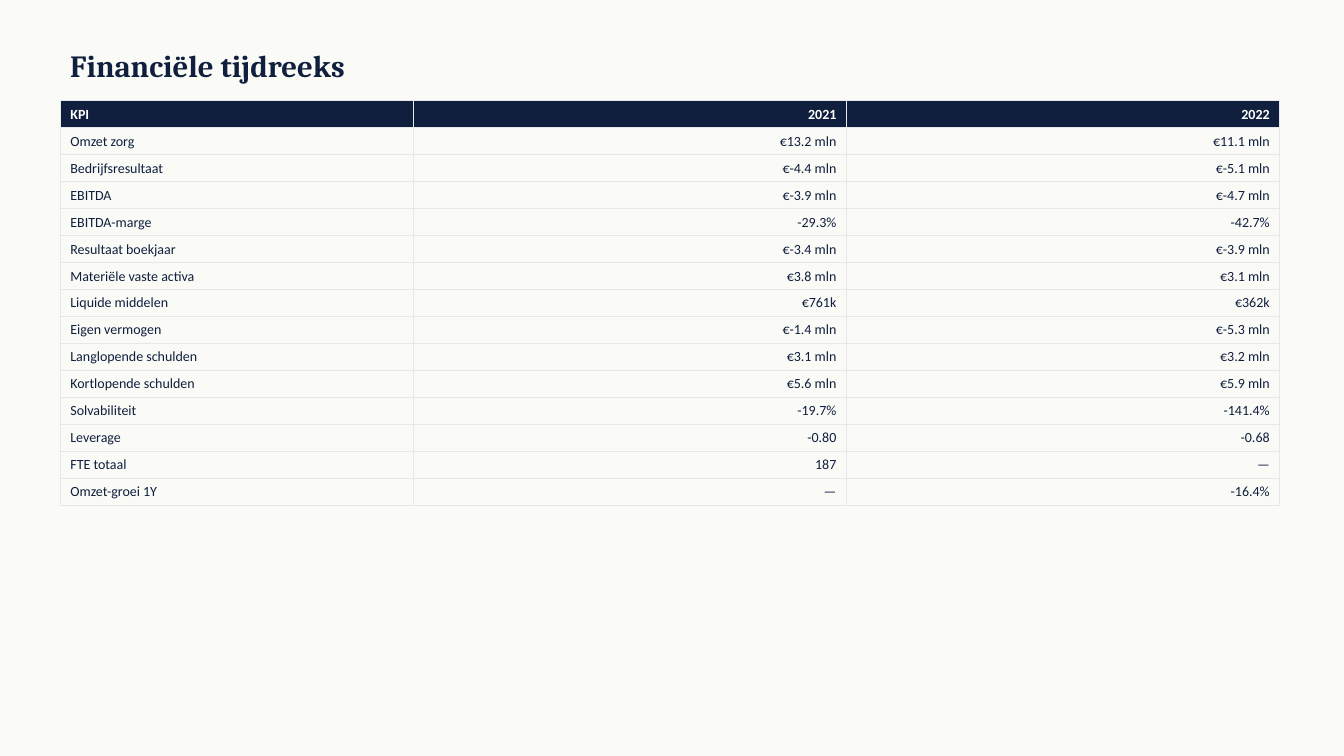
import pptx
import pptx.util
import pptx.dml.color
import pptx.enum.text
import pptx.oxml
import pptx.oxml.ns

Cm, Pt = pptx.util.Cm, pptx.util.Pt
ALIGN = pptx.enum.text.PP_ALIGN

# Content
HEADING = "Financiële tijdreeks"
KPI_ROWS = [
    ("KPI", "2021", "2022"),
    ("Omzet zorg", "€13.2 mln", "€11.1 mln"),
    ("Bedrijfsresultaat", "€-4.4 mln", "€-5.1 mln"),
    ("EBITDA", "€-3.9 mln", "€-4.7 mln"),
    ("EBITDA-marge", "-29.3%", "-42.7%"),
    ("Resultaat boekjaar", "€-3.4 mln", "€-3.9 mln"),
    ("Materiële vaste activa", "€3.8 mln", "€3.1 mln"),
    ("Liquide middelen", "€761k", "€362k"),
    ("Eigen vermogen", "€-1.4 mln", "€-5.3 mln"),
    ("Langlopende schulden", "€3.1 mln", "€3.2 mln"),
    ("Kortlopende schulden", "€5.6 mln", "€5.9 mln"),
    ("Solvabiliteit", "-19.7%", "-141.4%"),
    ("Leverage", "-0.80", "-0.68"),
    ("FTE totaal", "187", "—"),
    ("Omzet-groei 1Y", "—", "-16.4%"),
]
COLORS = {"paper": "FAFAF7", "navy": "0F1F3D", "white": "FFFFFF", "grid": "E5E7EB"}

# Layout
LEFT = Cm(1.52)
COLUMN_WIDTHS = [Cm(8.89), Cm(10.92), Cm(10.92)]
ROW_HEIGHT = Cm(0.68)


def rgb(name):
    return pptx.dml.color.RGBColor.from_string(COLORS[name])


def write(frame, text, font_name, size, color, bold, align=ALIGN.LEFT):
    frame.text = text
    paragraph = frame.paragraphs[0]
    paragraph.alignment = align
    font = paragraph.runs[0].font
    font.name, font.size, font.bold = font_name, Pt(size), bold
    font.color.rgb = rgb(color)


def add_borders(cell):
    for side in ("lnL", "lnR", "lnT", "lnB"):
        cell._tc.get_or_add_tcPr().append(pptx.oxml.parse_xml(
            f'<a:{side} {pptx.oxml.ns.nsdecls("a")} w="{Pt(0.5)}"><a:solidFill>'
            f'<a:srgbClr val="{COLORS["grid"]}"/></a:solidFill></a:{side}>'))


deck = pptx.Presentation()
deck.slide_width, deck.slide_height = Cm(33.87), Cm(19.05)
slide = deck.slides.add_slide(deck.slide_layouts[6])
slide.background.fill.solid()
slide.background.fill.fore_color.rgb = rgb("paper")

# Heading
heading = slide.shapes.add_textbox(LEFT, Cm(1.02), Cm(30.48), Cm(1.27)).text_frame
heading.word_wrap = True
heading.vertical_anchor = pptx.enum.text.MSO_ANCHOR.MIDDLE
write(heading, HEADING, "Cambria", 22, "navy", True)

# KPI table
kpi_table = slide.shapes.add_table(
    len(KPI_ROWS), len(COLUMN_WIDTHS), LEFT, Cm(2.54),
    sum(COLUMN_WIDTHS), ROW_HEIGHT * len(KPI_ROWS)).table
kpi_table.horz_banding = False
for column, width in zip(kpi_table.columns, COLUMN_WIDTHS):
    column.width = width

for r, values in enumerate(KPI_ROWS):
    is_header = r == 0
    kpi_table.rows[r].height = ROW_HEIGHT
    for c, value in enumerate(values):
        cell = kpi_table.cell(r, c)
        write(cell.text_frame, value, "Calibri", 10,
              "white" if is_header else "navy", is_header,
              ALIGN.RIGHT if c else ALIGN.LEFT)
        add_borders(cell)
        if is_header:
            cell.fill.solid()
            cell.fill.fore_color.rgb = rgb("navy")
        else:
            cell.fill.background()

deck.save("out.pptx")
